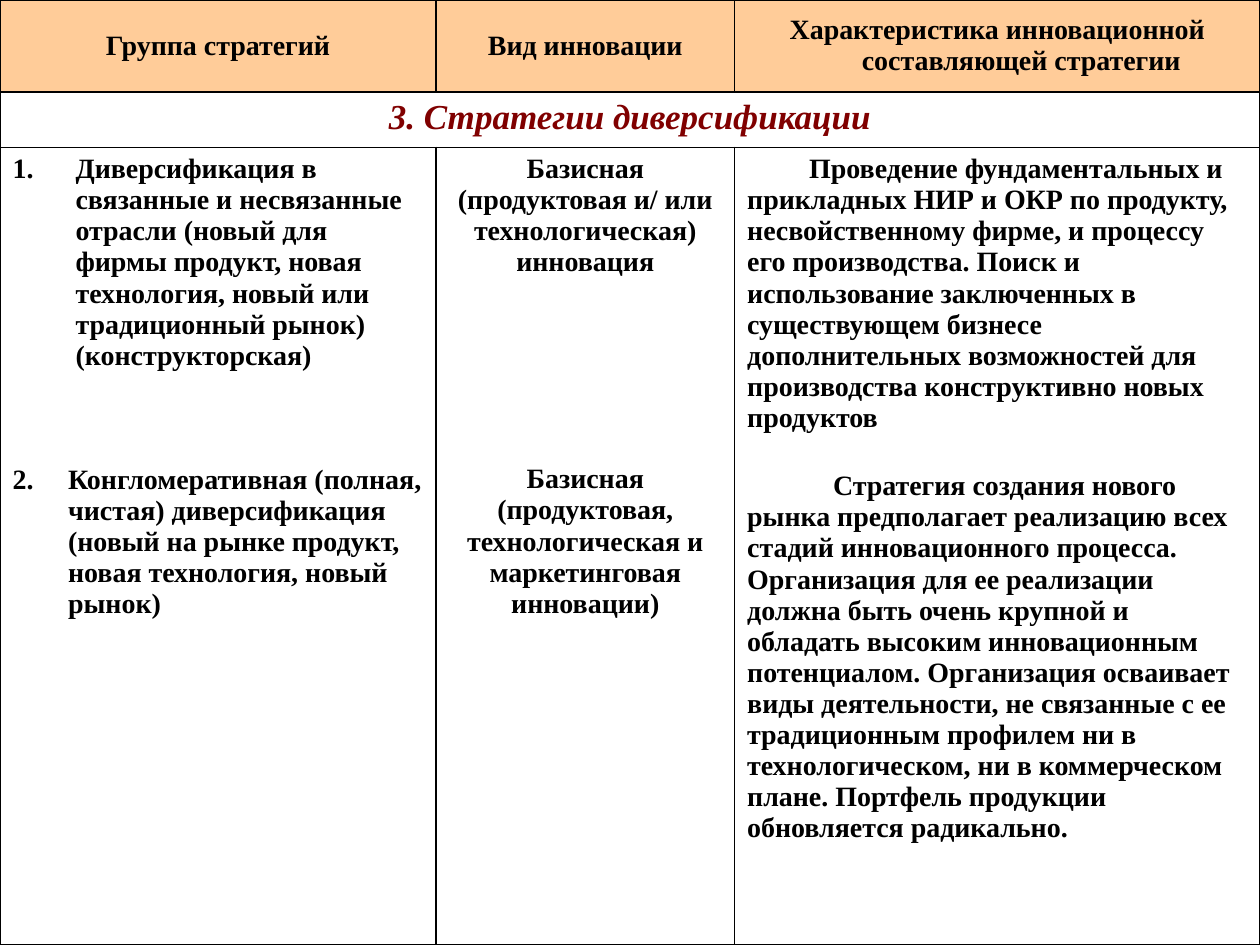
from typing import NamedTuple

from lxml.etree import SubElement
from pptx import Presentation
from pptx.dml.color import RGBColor
from pptx.enum.text import MSO_ANCHOR, PP_ALIGN
from pptx.oxml.ns import qn
from pptx.util import Cm, Pt

FONT = "Times New Roman"
BLACK, MAROON = "000000", "800000"
PEACH, WHITE, CREAM = "FFCC99", "FFFFFF", "FFFFCC"
LINE = 17.7  # height of one text line in points
COLS = (8.79, 6.02, 10.59)
ROWS = (1.85, 1.12, 16.08)


class Para(NamedTuple):
    text: str
    size: float = 16
    color: str = BLACK
    italic: bool = False
    center: bool = False
    left: float = 0
    first: float = 0
    before: float = 0
    number: int = 0


def paint(fill, color: str) -> None:
    fill.solid()
    fill.fore_color.rgb = RGBColor.from_string(color)


def write(p, text: str, *, size: float, color: str, italic: bool, center: bool,
          left: float, first: float, before: float, number: int) -> None:
    p.alignment = PP_ALIGN.CENTER if center else PP_ALIGN.LEFT
    p.space_before = Pt(before)
    props = p._p.get_or_add_pPr()
    props.set("marL", str(Cm(left)))
    props.set("indent", str(Cm(first)))
    if number:
        SubElement(props, qn("a:buAutoNum"), type="arabicPeriod",
                   startAt=str(number))
    run = p.add_run()
    run.text = text
    font = run.font
    font.name, font.size, font.bold, font.italic = FONT, Pt(size), True, italic
    font.color.rgb = RGBColor.from_string(color)


def edge(cell, color: str = BLACK, width: float = 1) -> None:
    """Draw a line on all four sides; call before the cell is filled."""
    props = cell._tc.get_or_add_tcPr()
    for side in ("lnL", "lnR", "lnT", "lnB"):
        line = SubElement(props, qn(f"a:{side}"), w=str(Pt(width)))
        solid = SubElement(line, qn("a:solidFill"))
        SubElement(solid, qn("a:srgbClr"), val=color)


def fill_cell(cell, paras: list[Para], color: str, anchor: MSO_ANCHOR) -> None:
    edge(cell)
    paint(cell.fill, color)
    cell.vertical_anchor = anchor
    frame = cell.text_frame
    for i, para in enumerate(paras):
        p = frame.add_paragraph() if i else frame.paragraphs[0]
        write(p, **para._asdict())


HANG = {"center": True, "left": 0.97, "first": -0.97}
HEADS = [
    [Para("Группа стратегий", center=True)],
    [Para("Вид инновации", **HANG)],
    [Para("Характеристика инновационной составляющей стратегии", **HANG)],
]
TITLE = [
    [Para("3. Стратегии диверсификации", size=20, color=MAROON, italic=True,
          **HANG)],
    [], [],
]
BODY = [
    [
        Para("Диверсификация в связанные и несвязанные отрасли (новый для "
             "фирмы продукт, новая технология, новый или традиционный рынок) "
             "(конструкторская)", left=1.27, first=-1.27, number=1),
        Para("Конгломеративная (полная, чистая) диверсификация (новый на "
             "рынке продукт, новая технология, новый рынок)",
             left=1.12, first=-1.12, before=3 * LINE, number=2),
    ],
    [
        Para("Базисная (продуктовая и/ или технологическая) инновация",
             center=True),
        Para("Базисная (продуктовая, технологическая и маркетинговая "
             "инновации)", center=True, before=6 * LINE),
    ],
    [
        Para("Проведение фундаментальных и прикладных НИР и ОКР по продукту, "
             "несвойственному фирме, и процессу его производства. Поиск и "
             "использование заключенных в существующем бизнесе "
             "дополнительных возможностей для производства конструктивно "
             "новых продуктов", first=1.25),
        Para("Стратегия создания нового рынка предполагает реализацию всех "
             "стадий инновационного процесса. Организация для ее реализации "
             "должна быть очень крупной и обладать высоким инновационным "
             "потенциалом. Организация осваивает виды деятельности, не "
             "связанные с ее традиционным профилем ни в технологическом, ни "
             "в коммерческом плане. Портфель продукции обновляется "
             "радикально.", first=1.73, before=1.2 * LINE),
    ],
]


def main() -> None:
    deck = Presentation()
    deck.slide_width, deck.slide_height = Cm(25.4), Cm(19.05)
    slide = deck.slides.add_slide(deck.slide_layouts[6])
    paint(slide.background.fill, CREAM)

    table = slide.shapes.add_table(
        len(ROWS), len(COLS), 0, 0, Cm(sum(COLS)), Cm(sum(ROWS))).table
    table.first_row = table.horz_banding = False
    for col, width in zip(table.columns, COLS):
        col.width = Cm(width)
    for row, height in zip(table.rows, ROWS):
        row.height = Cm(height)
    table.cell(1, 0).merge(table.cell(1, 2))

    looks = (
        (HEADS, PEACH, MSO_ANCHOR.MIDDLE),
        (TITLE, WHITE, MSO_ANCHOR.TOP),
        (BODY, WHITE, MSO_ANCHOR.TOP),
    )
    for row, (texts, color, anchor) in zip(table.rows, looks):
        for cell, paras in zip(row.cells, texts):
            fill_cell(cell, paras, color, anchor)

    deck.save("out.pptx")


if __name__ == "__main__":
    main()
